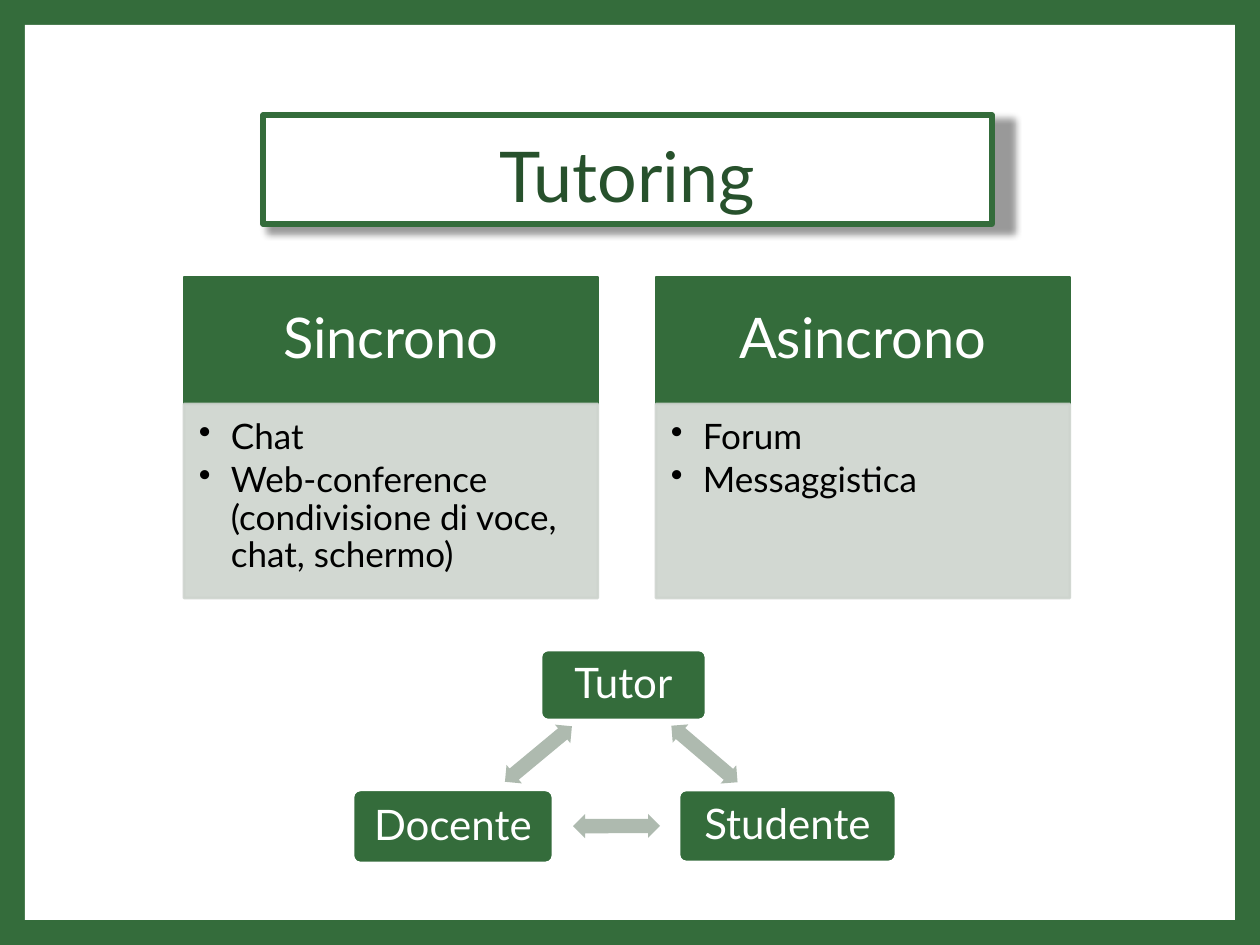
import pptx
import pptx.util
import pptx.dml.color
import pptx.enum.shapes
import pptx.enum.text
import pptx.oxml
import pptx.oxml.ns
from dataclasses import dataclass

EMU_PER_PX = 914400 / 126
SHAPES = pptx.enum.shapes.MSO_SHAPE
ALIGN = pptx.enum.text.PP_ALIGN
ANCHOR = pptx.enum.text.MSO_ANCHOR


@dataclass(frozen=True)
class Theme:
    font: str = "Lato"
    green: str = "346C3B"
    dark_green: str = "27512C"
    pale: str = "CED4CE"
    arrow: str = "AEBAAF"
    white: str = "FFFFFF"
    black: str = "000000"
    title_size: int = 40
    heading_size: int = 32
    node_size: int = 24
    body_size: int = 20


THEME = Theme()


def px(length):
    return pptx.util.Emu(round(length * EMU_PER_PX))


def rgb(code):
    return pptx.dml.color.RGBColor.from_string(code)


def apply(target, values):
    for name, value in values.items():
        setattr(target, name, value)


def add_xml(parent, tag, inner="", **attributes):
    """Append one drawing element, with optional child markup."""
    listed = "".join(f' {name}="{value}"' for name, value in attributes.items())
    namespace = pptx.oxml.ns.nsdecls("a")
    parent.append(pptx.oxml.parse_xml(f"<a:{tag} {namespace}{listed}>{inner}</a:{tag}>"))


def add_block(slide, kind, box, fill, line=None, line_width=1.5):
    block = slide.shapes.add_shape(kind, *map(px, box))
    block.shadow.inherit = False
    block.fill.solid()
    block.fill.fore_color.rgb = rgb(fill)
    if line:
        block.line.color.rgb = rgb(line)
        block.line.width = pptx.util.Pt(line_width)
    else:
        block.line.fill.background()
    return block


def write(block, lines, size, color, insets, spacing=0.9, after=0,
          align=ALIGN.CENTER, anchor=ANCHOR.MIDDLE):
    frame = block.text_frame
    sides = ("margin_left", "margin_top", "margin_right", "margin_bottom")
    apply(frame, {"word_wrap": True, "vertical_anchor": anchor,
                  **dict(zip(sides, map(px, insets)))})
    for index, line in enumerate(lines):
        paragraph = frame.add_paragraph() if index else frame.paragraphs[0]
        apply(paragraph, {"alignment": align, "line_spacing": spacing,
                          "space_after": pptx.util.Pt(after)})
        run = paragraph.add_run()
        run.text = line
        apply(run.font, {"name": THEME.font, "size": pptx.util.Pt(size)})
        run.font.color.rgb = rgb(color)
    return frame


def add_title(slide, text):
    title = add_block(slide, SHAPES.RECTANGLE, (263, 115, 729, 109),
                      THEME.white, THEME.green, 3)
    write(title, [text], THEME.title_size, THEME.dark_green, (12, 6, 12, 6), 1.12)
    # Offset shadow, slightly larger than the box
    effects = title._element.spPr.find(pptx.oxml.ns.qn("a:effectLst"))
    shade = '<a:srgbClr val="000000"><a:alpha val="40000"/></a:srgbClr>'
    add_xml(effects, "outerShdw", shade, blurRad=50800, dist=50800, dir=2700000,
            sx=102000, sy=102000, algn="tl", rotWithShape=0)


def add_card(slide, left, heading, items):
    top, width, head_height, body_height = 277, 414, 127, 194
    header = add_block(slide, SHAPES.RECTANGLE, (left, top, width, head_height),
                       THEME.green, THEME.green)
    write(header, [heading], THEME.heading_size, THEME.white, (32, 18, 32, 18))

    body = add_block(slide, SHAPES.RECTANGLE,
                     (left, top + head_height, width, body_height),
                     THEME.pale, THEME.pale)
    for color in body._element.spPr.iter(pptx.oxml.ns.qn("a:srgbClr")):
        add_xml(color, "alpha", val=90000)
    frame = write(body, items, THEME.body_size, THEME.black, (15, 15, 20, 21),
                  after=3, align=ALIGN.LEFT, anchor=ANCHOR.TOP)
    for paragraph in frame.paragraphs:
        properties = paragraph._p.get_or_add_pPr()
        properties.set("marL", str(px(32)))
        properties.set("indent", str(-px(32)))
        add_xml(properties, "buChar", char="•")


def add_node(slide, name, box):
    node = add_block(slide, SHAPES.ROUNDED_RECTANGLE, box, THEME.green, THEME.white)
    node.adjustments[0] = 0.1
    write(node, [name], THEME.node_size, THEME.white, (12, 12, 12, 12))


def add_exchange(slide, left, top, angle):
    arrow = add_block(slide, SHAPES.LEFT_RIGHT_ARROW, (left, top, 87, 24), THEME.arrow)
    arrow.adjustments[0] = 0.6
    arrow.adjustments[1] = 0.5
    arrow.rotation = angle


def main():
    deck = pptx.Presentation()
    apply(deck, {"slide_width": px(1260), "slide_height": px(945)})
    slide = deck.slides.add_slide(deck.slide_layouts[6])

    # Green frame around a white page
    slide.background.fill.solid()
    slide.background.fill.fore_color.rgb = rgb(THEME.green)
    add_block(slide, SHAPES.RECTANGLE, (25, 25, 1210, 895), THEME.white)

    add_title(slide, "Tutoring")

    # Two kinds of tutoring
    cards = {
        "Sincrono": ["Chat", "Web-conference (condivisione di voce, chat, schermo)"],
        "Asincrono": ["Forum", "Messaggistica"],
    }
    for column, (heading, items) in enumerate(cards.items()):
        add_card(slide, 184 + 472 * column, heading, items)

    # Triangle of roles
    roles = {
        "Tutor": (541, 650, 165, 70),
        "Studente": (679, 790, 217, 72),
        "Docente": (353, 790, 200, 73),
    }
    for name, box in roles.items():
        add_node(slide, name, box)
    for left, top, angle in ((661, 742, 40.5), (573, 814, 179.9), (495, 742, 320.3)):
        add_exchange(slide, left, top, angle)

    deck.save("out.pptx")


if __name__ == "__main__":
    main()
